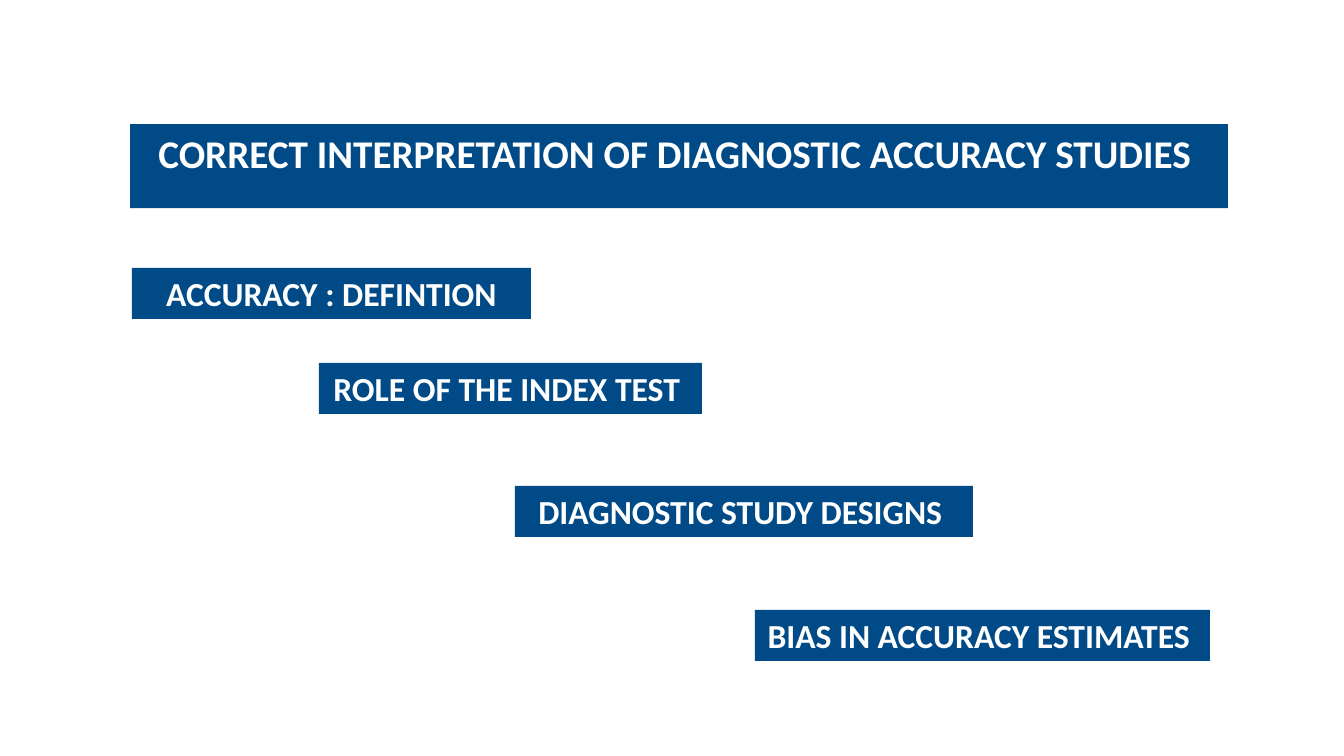
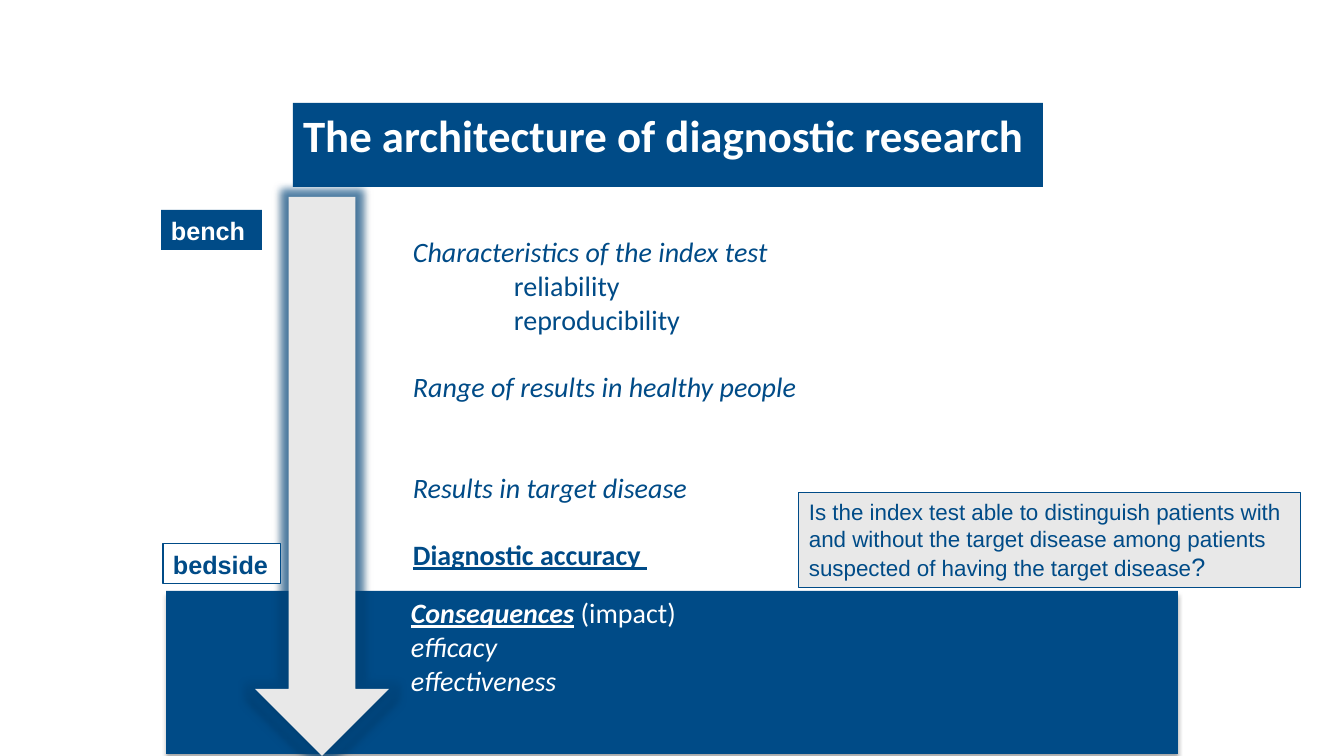
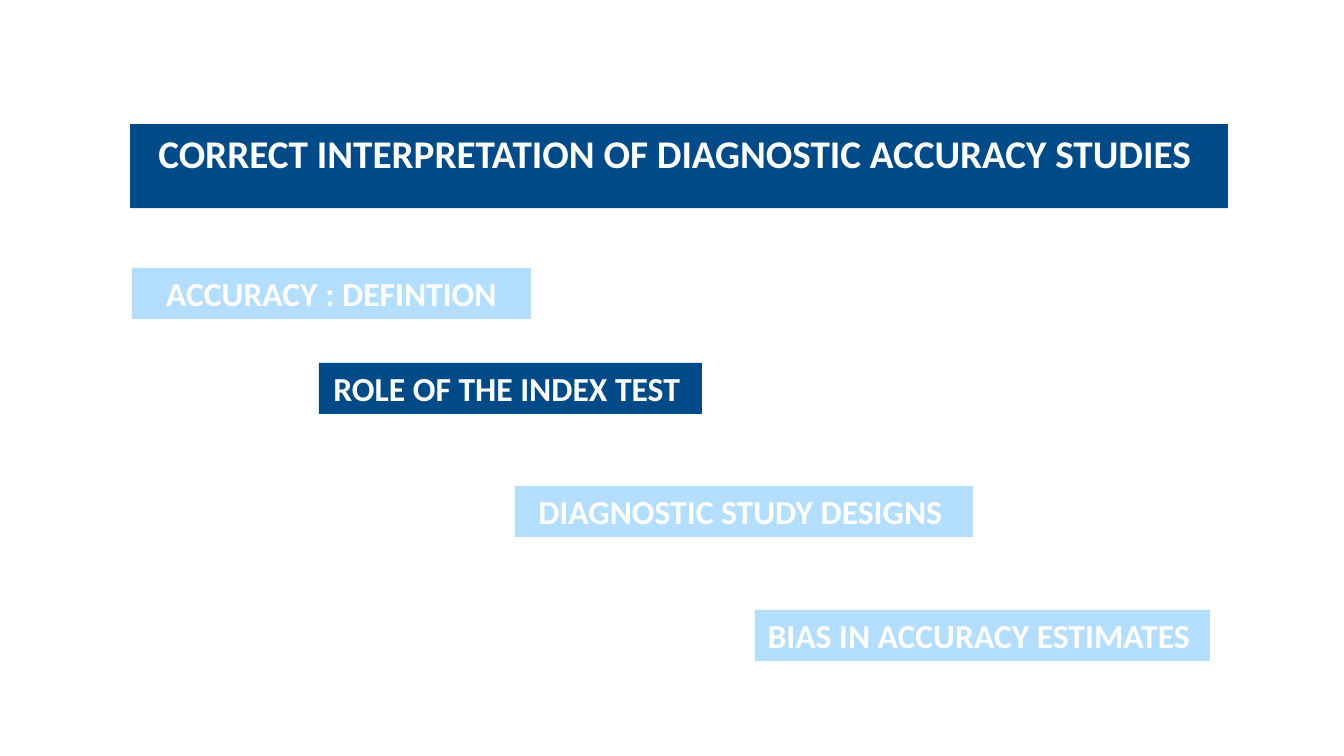
from lxml import etree
from pptx import Presentation
from pptx.dml.color import RGBColor
from pptx.enum.shapes import MSO_SHAPE
from pptx.enum.text import MSO_ANCHOR, MSO_AUTO_SIZE, PP_ALIGN
from pptx.oxml.ns import qn
from pptx.util import Emu, Pt

RECTANGLE, DOWN_ARROW = MSO_SHAPE.RECTANGLE, MSO_SHAPE.DOWN_ARROW
LEFT, CENTER = PP_ALIGN.LEFT, PP_ALIGN.CENTER
TOP, GROW = MSO_ANCHOR.TOP, MSO_AUTO_SIZE.SHAPE_TO_FIT_TEXT
EMU_PER_PX = 914400 / 100.8
TITLE_ONLY = 5

# Shared look
NAVY, PALE, GREY, WHITE, BLACK = "004B87", "B4DEFF", "E8E8E8", "FFFFFF", "000000"
BAR_FONT = {"name": "Calibri", "size": 24, "bold": True, "color": WHITE}
BODY_FONT = {"name": "Calibri", "size": 20, "color": NAVY}
LABEL_FONT = {"name": "Arial", "size": 18, "bold": True}
CALLOUT_FONT = {"name": "Arial", "size": 16, "color": NAVY}
ITALIC = {"italic": True}
KEY_TERM = {"bold": True, "underline": True}
LINE = 24  # height of one body line, in points

# Agenda content: boxes are left, top, width, height in px
AGENDA_TITLE = "CORRECT INTERPRETATION OF DIAGNOSTIC ACCURACY STUDIES "
AGENDA_TITLE_BOX = (130, 124, 1098, 57)
BAR_HEIGHT = 51
AGENDA = [
    ("ACCURACY : DEFINTION", 132, 268, 399),
    ("ROLE OF THE INDEX TEST ", 319, 363, 383),
    ("DIAGNOSTIC STUDY DESIGNS ", 515, 486, 458),
    ("BIAS IN ACCURACY ESTIMATES ", 755, 610, 455),
]

# Architecture content: paragraphs are (runs, empty lines above, indent in px)
ARCHITECTURE_TITLE = "The architecture of diagnostic research"
ARCHITECTURE_TITLE_BOX = (293, 103, 750, 65)
BENCH_STEPS = [
    ([("Characteristics of the index test", ITALIC)], 0, 0),
    ([("reliability", {})], 0, 101),
    ([("reproducibility", {})], 0, 101),
    ([("Range of results in healthy people", ITALIC)], 1, 0),
    ([("Results in target disease", ITALIC)], 2, 0),
    ([("Diagnostic accuracy ", KEY_TERM)], 1, 0),
]
BEDSIDE_STEPS = [
    ([("Consequences", {**KEY_TERM, **ITALIC}), (" (impact)", {})], 0, 0),
    ([("efficacy", ITALIC)], 0, 0),
    ([("effectiveness", ITALIC)], 0, 0),
]
QUESTION = [
    ("Is the index test able to distinguish patients with and without the target "
     "disease among patients suspected of having the target disease", {}),
    ("?", {"size": 18}),
]


def px(length):
    return Emu(round(length * EMU_PER_PX))


def rgb(hex_color):
    return RGBColor.from_string(hex_color)


def format_font(font, values):
    for key, value in values.items():
        if key == "color":
            font.color.rgb = rgb(value)
        else:
            setattr(font, key, Pt(value) if key == "size" else value)


def plain(text):
    return [([(text, {})], 0, 0)]


def write(shape, paragraphs, font, align=LEFT):
    frame = shape.text_frame
    for key, value in {"word_wrap": True, "auto_size": GROW, "vertical_anchor": TOP}.items():
        setattr(frame, key, value)
    for index, (runs, lines_above, indent) in enumerate(paragraphs):
        paragraph = frame.paragraphs[0] if index == 0 else frame.add_paragraph()
        paragraph.alignment = align
        if indent:
            paragraph._p.get_or_add_pPr().set("marL", str(px(indent)))
        if lines_above:
            paragraph.space_before = Pt(lines_above * LINE)
        for text, changes in runs:
            run = paragraph.add_run()
            run.text = text
            format_font(run.font, {**font, **changes})


def add_box(slide, box, fill, line=None, kind=RECTANGLE):
    shape = slide.shapes.add_shape(kind, *map(px, box))
    shape.shadow.inherit = False
    shape.fill.solid()
    shape.fill.fore_color.rgb = rgb(fill)
    if line:
        shape.line.color.rgb = rgb(line)
        shape.line.width = Pt(0.75)
    else:
        shape.line.fill.background()
    return shape


def add_text(slide, box, paragraphs, font):
    write(slide.shapes.add_textbox(*map(px, box)), paragraphs, font)


def add_effect(shape, tag, color, alpha, **attributes):
    effects = shape._element.spPr.find(qn("a:effectLst"))
    effect = etree.SubElement(effects, qn(tag), {k: str(v) for k, v in attributes.items()})
    color_element = etree.SubElement(effect, qn("a:srgbClr"), val=color)
    etree.SubElement(color_element, qn("a:alpha"), val=str(alpha * 1000))


def add_shadow(shape):
    add_effect(shape, "a:outerShdw", BLACK, 32, blurRad=Pt(3.5), dist=Pt(2.2),
               dir=90 * 60000, rotWithShape=0)


def add_titled_slide(presentation, text, box, size, align):
    slide = presentation.slides.add_slide(presentation.slide_layouts[TITLE_ONLY])
    title = slide.shapes.title
    for key, value in zip(("left", "top", "width", "height"), box):
        setattr(title, key, px(value))
    title.fill.solid()
    title.fill.fore_color.rgb = rgb(NAVY)
    write(title, plain(text), {**BAR_FONT, "size": size}, align)
    return slide


def add_agenda(presentation, active):
    slide = add_titled_slide(presentation, AGENDA_TITLE, AGENDA_TITLE_BOX, 28, CENTER)
    for index, (text, left, top, width) in enumerate(AGENDA):
        fill = NAVY if index in active else PALE
        bar = add_box(slide, (left, top, width, BAR_HEIGHT), fill)
        write(bar, plain(text), BAR_FONT, CENTER)


def add_architecture(presentation):
    slide = add_titled_slide(presentation, ARCHITECTURE_TITLE, ARCHITECTURE_TITLE_BOX, 32, LEFT)

    # Bedside band and the steps
    add_shadow(add_box(slide, (166, 591, 1012, 163), NAVY))
    add_text(slide, (403, 230, 405, 380), BENCH_STEPS, BODY_FONT)
    add_text(slide, (401, 591, 405, 112), BEDSIDE_STEPS, {**BODY_FONT, "color": WHITE})

    # Arrow from bench to bedside
    arrow = add_box(slide, (255, 197, 134, 559), GREY, kind=DOWN_ARROW)
    add_effect(arrow, "a:glow", NAVY, 60, rad=Pt(11))
    add_shadow(arrow)

    # Labels and question
    bench = add_box(slide, (161, 210, 101, 40), NAVY)
    write(bench, plain("bench"), {**LABEL_FONT, "color": WHITE})
    bedside = add_box(slide, (163, 544, 118, 40), WHITE, NAVY)
    write(bedside, plain("bedside"), {**LABEL_FONT, "color": NAVY})
    question = add_box(slide, (799, 493, 502, 95), GREY, NAVY)
    write(question, [(QUESTION, 0, 0)], CALLOUT_FONT)


def main():
    presentation = Presentation()
    presentation.slide_width, presentation.slide_height = px(1344), px(756)
    add_agenda(presentation, active=range(len(AGENDA)))
    add_architecture(presentation)
    add_agenda(presentation, active=[1])
    presentation.save("out.pptx")


if __name__ == "__main__":
    main()
